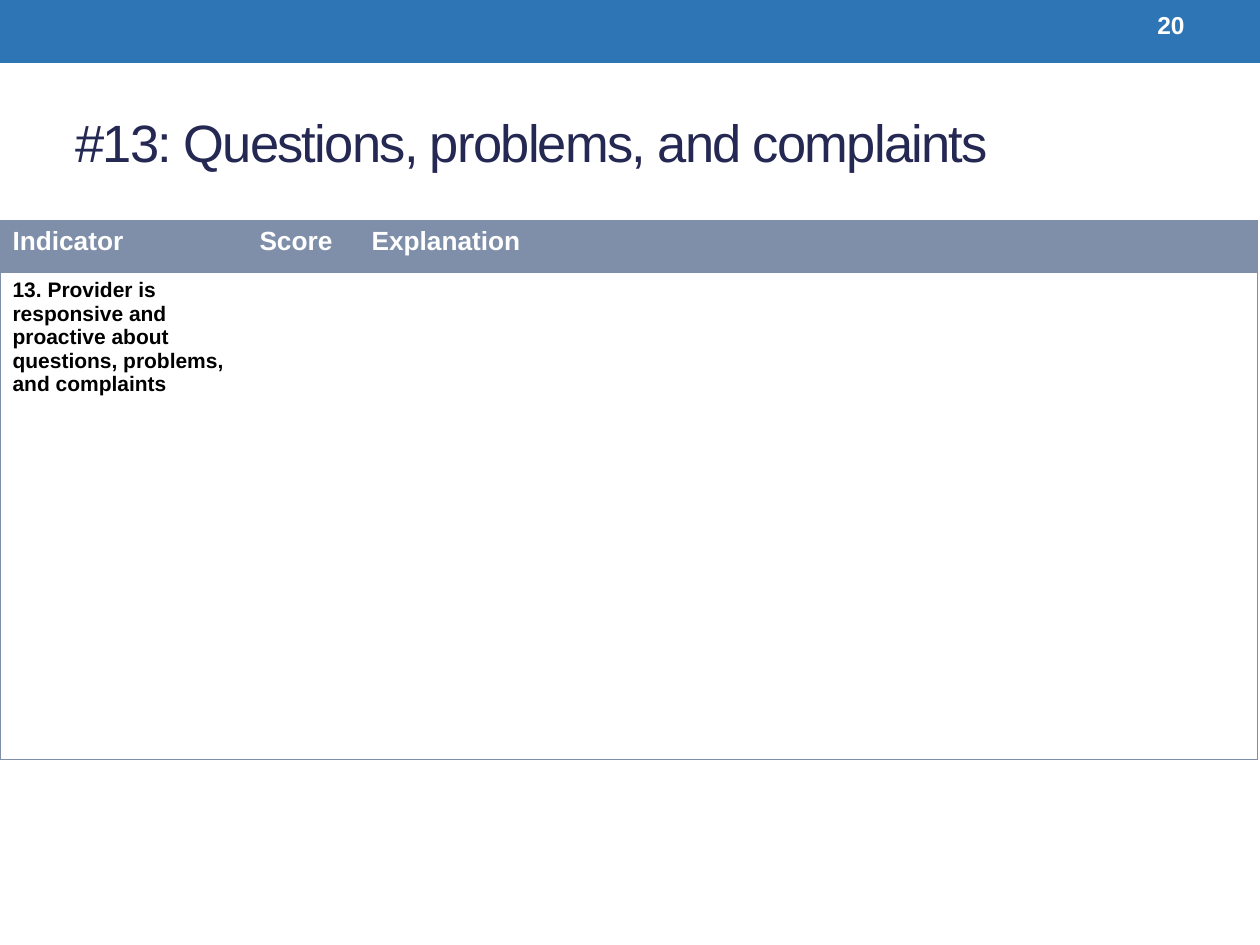
from pptx import Presentation
from pptx.dml.color import RGBColor
from pptx.enum.shapes import MSO_SHAPE as Shape
from pptx.enum.text import MSO_ANCHOR as Anchor, PP_ALIGN as Align
from pptx.oxml import parse_xml
from pptx.oxml.ns import nsdecls
from pptx.util import Inches, Pt

SLATE = "7F8FA9"
WHITE = "FFFFFF"


def color(hex_code):
    return RGBColor.from_string(hex_code)


def write(frame, text, size, hex_code, bold):
    paragraph = frame.paragraphs[0]
    paragraph.text = text
    font = paragraph.font
    font.name, font.size, font.bold = "Arial", Pt(size), bold
    font.color.rgb = color(hex_code)
    return paragraph


prs = Presentation()
prs.slide_width, prs.slide_height = Inches(10), Inches(7.5)
slide = prs.slides.add_slide(prs.slide_layouts[6])

# Top band
band = slide.shapes.add_shape(Shape.RECTANGLE, 0, 0, Inches(10), Inches(0.5))
band.shadow.inherit = False
band.fill.solid()
band.fill.fore_color.rgb = color("2E75B6")
band.line.fill.background()

# Title, with tightened letter spacing
title = slide.shapes.add_textbox(Inches(0.5), Inches(0.58), Inches(9), Inches(1.08)).text_frame
title.word_wrap = True
title.vertical_anchor = Anchor.MIDDLE
heading = write(title, "#13: Questions, problems, and complaints", 30, "242852", False)
heading.runs[0].font._element.set("spc", "-100")

# Indicator table
rows = [
    ["Indicator", "Score", "Explanation"],
    ["13. Provider is responsive and proactive about questions, problems, and complaints", "", ""],
]
col_widths = [1.96, 0.89, 7.13]
row_heights = [0.41, 3.87]
table = slide.shapes.add_table(
    len(rows), len(col_widths), 0, Inches(1.75),
    Inches(sum(col_widths)), Inches(sum(row_heights))).table
table.horz_banding = False
for column, width in zip(table.columns, col_widths):
    column.width = Inches(width)
for row, height in zip(table.rows, row_heights):
    row.height = Inches(height)

for r, texts in enumerate(rows):
    for c, text in enumerate(texts):
        cell = table.cell(r, c)
        header = r == 0
        if text:
            paragraph = write(cell.text_frame, text, 15 if header else 12,
                              WHITE if header else "000000", True)
            if not header:
                paragraph.space_after = Pt(10)

        # Horizontal rules everywhere, vertical ones only on the outer edges
        drawn = {"L": c == 0, "R": c == len(texts) - 1, "T": True, "B": True}
        for side, visible in drawn.items():
            paint = (f'<a:solidFill><a:srgbClr val="{SLATE}"/></a:solidFill>'
                     if visible else "<a:noFill/>")
            cell._tc.get_or_add_tcPr().append(parse_xml(
                f'<a:ln{side} {nsdecls("a")} w="{Pt(0.75)}">{paint}</a:ln{side}>'))

        if header:
            cell.fill.solid()
            cell.fill.fore_color.rgb = color(SLATE)
        else:
            cell.fill.background()

# Page number
number = slide.shapes.add_textbox(Inches(8.33), Inches(0.02), Inches(1.17), Inches(0.36)).text_frame
number.word_wrap = True
number.vertical_anchor = Anchor.MIDDLE
write(number, "20", 14, WHITE, True).alignment = Align.RIGHT

prs.save("out.pptx")
